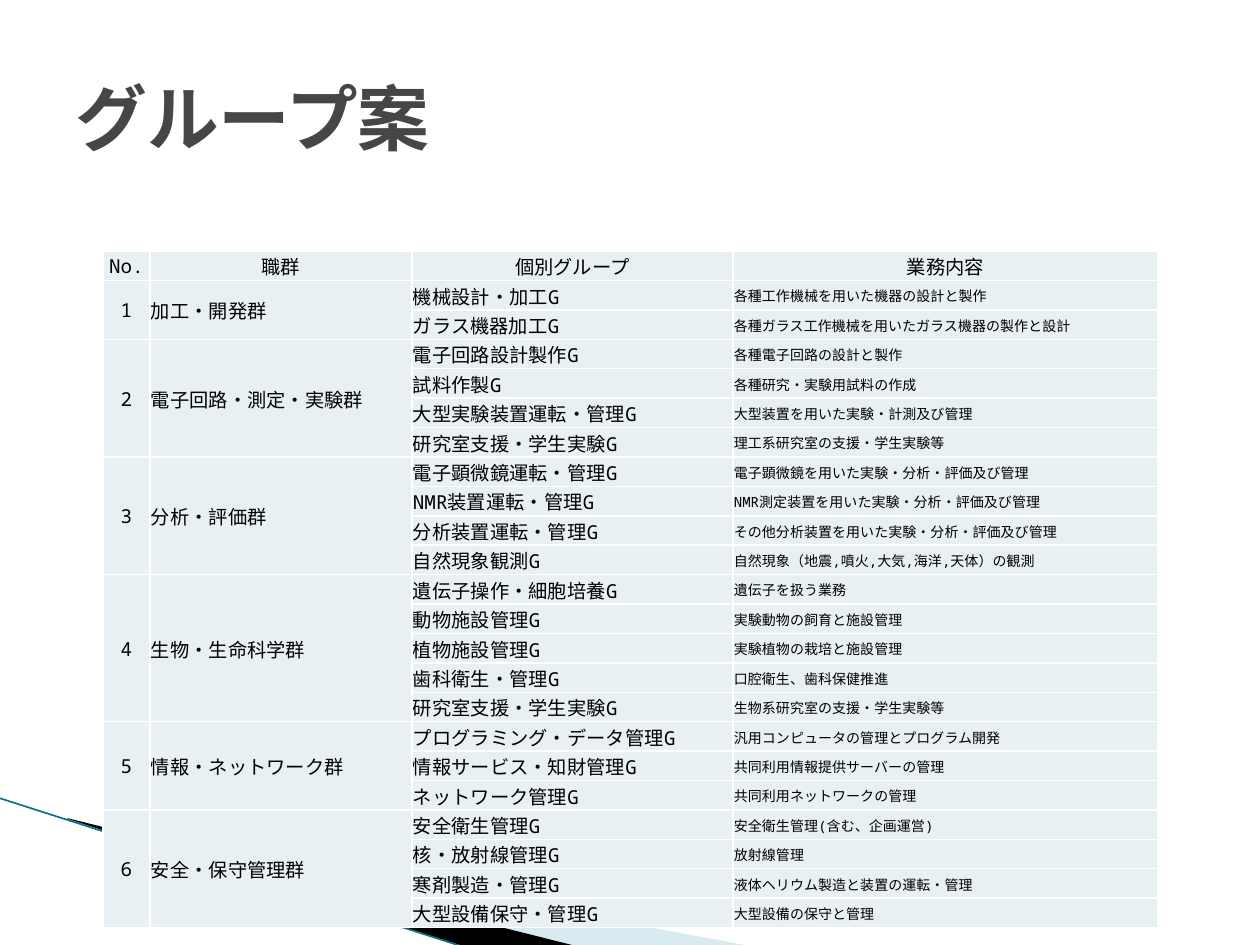
from lxml import etree
from pptx import Presentation
from pptx import util as u
from pptx.dml.color import RGBColor
from pptx.enum import shapes, text
from pptx.oxml import parse_xml
from pptx.oxml.ns import nsdecls, qn

PX = 914400 / 126
FONT = "Noto Sans Mono"


def rgb(value):
    return RGBColor.from_string(value)


def style(paragraph, size, color, bold=False):
    for run in paragraph.runs:
        run.font.name = FONT
        run.font.size = u.Pt(size)
        run.font.bold = bold
        run.font.color.rgb = rgb(color)


prs = Presentation()
prs.slide_width = round(1260 * PX)
prs.slide_height = round(945 * PX)
slide = prs.slides.add_slide(prs.slide_layouts[6])

waves = [
    ("A0CBDC", 40, [(69, 820), (750, 946), (575, 946), (69, 819)]),
    ("000000", 100, [(67, 818), (576, 946), (469, 948), (68, 819)]),
]
for color, opacity, points in waves:
    outline = slide.shapes.build_freeform(*points[0], scale=PX)
    outline.add_line_segments(points[1:], close=True)
    wave = outline.convert_to_shape()
    wave.shadow.inherit = False
    wave.line.fill.background()
    wave.fill.solid()
    wave.fill.fore_color.rgb = rgb(color)
    if opacity < 100:
        tint = wave._element.spPr.find(".//" + qn("a:srgbClr"))
        etree.SubElement(tint, qn("a:alpha"), val=str(opacity * 1000))

edge = slide.shapes.add_connector(
    shapes.MSO_CONNECTOR.STRAIGHT, *[round(v * PX) for v in (-1, 798, 467, 948)])
edge.line.color.rgb = rgb("0F6F83")
edge.line.width = u.Pt(0.95)
etree.SubElement(edge._element.spPr, qn("a:effectLst"))

headings = ["No.", "職群", "個別グループ", "業務内容"]
families = [
    ("加工・開発群", [
        ("機械設計・加工G", "各種工作機械を用いた機器の設計と製作"),
        ("ガラス機器加工G", "各種ガラス工作機械を用いたガラス機器の製作と設計"),
    ]),
    ("電子回路・測定・実験群", [
        ("電子回路設計製作G", "各種電子回路の設計と製作"),
        ("試料作製G", "各種研究・実験用試料の作成"),
        ("大型実験装置運転・管理G", "大型装置を用いた実験・計測及び管理"),
        ("研究室支援・学生実験G", "理工系研究室の支援・学生実験等"),
    ]),
    ("分析・評価群", [
        ("電子顕微鏡運転・管理G", "電子顕微鏡を用いた実験・分析・評価及び管理"),
        ("NMR装置運転・管理G", "NMR測定装置を用いた実験・分析・評価及び管理"),
        ("分析装置運転・管理G", "その他分析装置を用いた実験・分析・評価及び管理"),
        ("自然現象観測G", "自然現象（地震,噴火,大気,海洋,天体）の観測"),
    ]),
    ("生物・生命科学群", [
        ("遺伝子操作・細胞培養G", "遺伝子を扱う業務"),
        ("動物施設管理G", "実験動物の飼育と施設管理"),
        ("植物施設管理G", "実験植物の栽培と施設管理"),
        ("歯科衛生・管理G", "口腔衛生、歯科保健推進"),
        ("研究室支援・学生実験G", "生物系研究室の支援・学生実験等"),
    ]),
    ("情報・ネットワーク群", [
        ("プログラミング・データ管理G", "汎用コンピュータの管理とプログラム開発"),
        ("情報サービス・知財管理G", "共同利用情報提供サーバーの管理"),
        ("ネットワーク管理G", "共同利用ネットワークの管理"),
    ]),
    ("安全・保守管理群", [
        ("安全衛生管理G", "安全衛生管理(含む、企画運営)"),
        ("核・放射線管理G", "放射線管理"),
        ("寒剤製造・管理G", "液体ヘリウム製造と装置の運転・管理"),
        ("大型設備保守・管理G", "大型設備の保守と管理"),
    ]),
]
rows = [headings]
spans = []
for number, (family, groups) in enumerate(families, 1):
    spans.append((len(rows), len(rows) + len(groups) - 1))
    for index, (group, duty) in enumerate(groups):
        labels = ["", ""] if index else [str(number), family]
        rows.append(labels + [group, duty])

widths = [47, 262, 321, 425]
plan_height = 677
frame = slide.shapes.add_table(
    len(rows), len(widths), round(103 * PX), round(251 * PX),
    round(sum(widths) * PX), round(plan_height * PX))
plan = frame.table
plan.first_row = False
plan.horz_banding = False
for column, width in zip(plan.columns, widths):
    column.width = round(width * PX)
for row in plan.rows:
    row.height = round(plan_height * PX / len(rows))

for r, values in enumerate(rows):
    for c, value in enumerate(values):
        cell = plan.cell(r, c)
        cell.margin_left = cell.margin_right = cell.margin_top = round(PX)
        cell.margin_bottom = 0
        cell.vertical_anchor = text.MSO_ANCHOR.MIDDLE
        for side in ("lnL", "lnR", "lnT", "lnB"):
            cell._tc.get_or_add_tcPr().append(parse_xml(
                f'<a:{side} {nsdecls("a")} w="12700"><a:solidFill>'
                f'<a:srgbClr val="FFFFFF"/></a:solidFill></a:{side}>'))
        cell.fill.solid()
        cell.fill.fore_color.rgb = rgb("E8F0F4")
        if value:
            cell.text_frame.text = value
            entry = cell.text_frame.paragraphs[0]
            centred = r == 0 or c == 0
            entry.alignment = text.PP_ALIGN.CENTER if centred else text.PP_ALIGN.LEFT
            style(entry, 8 if r and c == 3 else 11, "000000")

for first, last in spans:
    for c in (0, 1):
        plan.cell(first, c).merge(plan.cell(last, c))

title = slide.shapes.add_textbox(*[round(v * PX) for v in (63, 38, 1134, 158)])
title.text_frame.word_wrap = True
title.text_frame.vertical_anchor = text.MSO_ANCHOR.MIDDLE
title.text_frame.text = "グループ案"
heading = title.text_frame.paragraphs[0]
style(heading, 41, "464646", bold=True)
etree.SubElement(heading.runs[0].font._element, qn("a:ea"), typeface=FONT)

prs.save("out.pptx")
